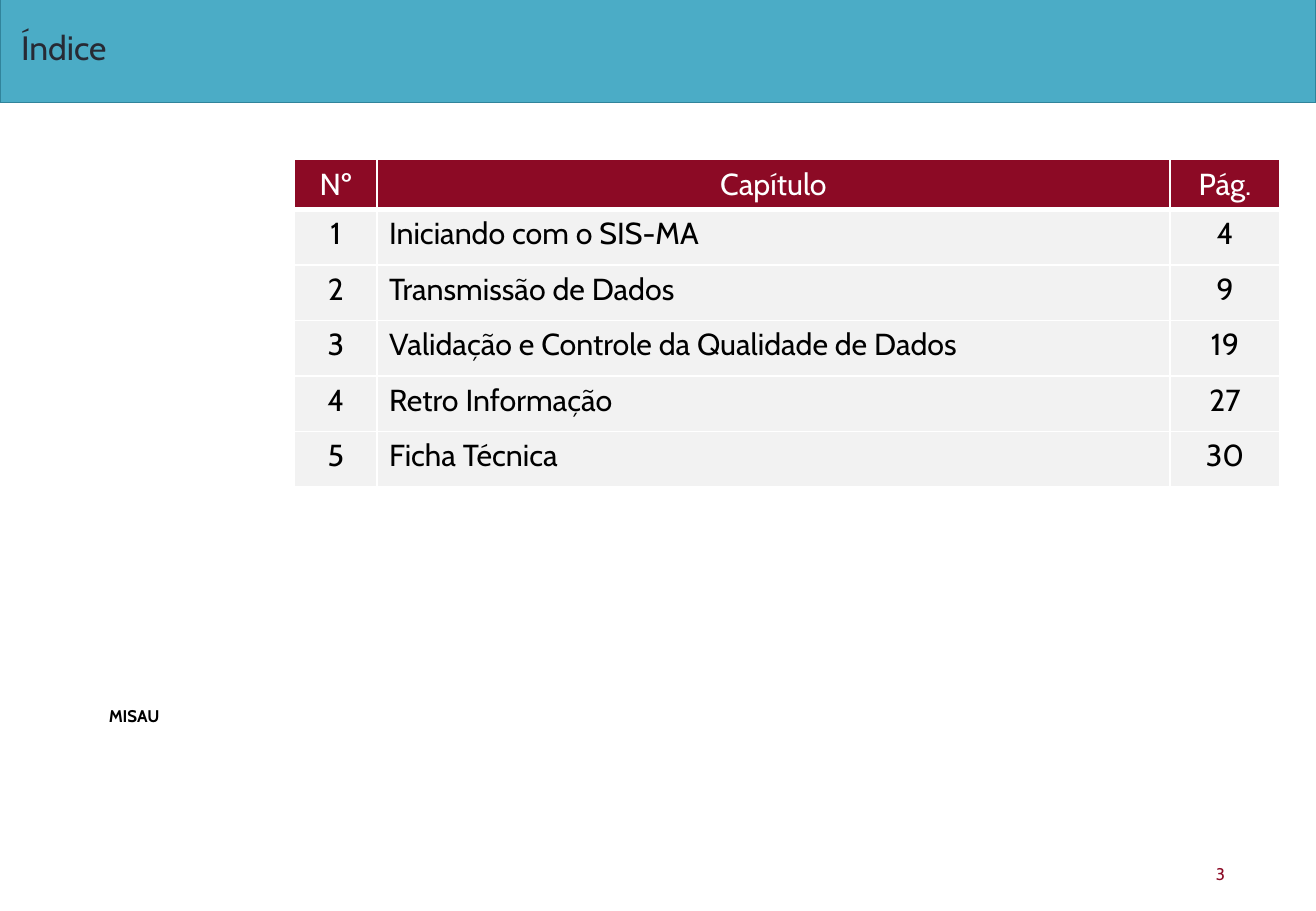
from dataclasses import dataclass

from lxml.etree import SubElement
from pptx import Presentation
from pptx.dml.color import RGBColor
from pptx.enum.shapes import MSO_SHAPE
from pptx.enum.text import MSO_ANCHOR, PP_ALIGN
from pptx.oxml.ns import qn
from pptx.slide import Slide
from pptx.table import _Cell
from pptx.text.text import _Paragraph
from pptx.util import Cm, Length, Pt

FONT = "Cabin"
TEAL = RGBColor(0x4B, 0xAC, 0xC6)
TEAL_DARK = RGBColor(0x31, 0x84, 0x9B)
WINE = RGBColor(0x8C, 0x0A, 0x25)
PAGE_RED = RGBColor(0x8C, 0x0B, 0x26)
INK = RGBColor(0x27, 0x2A, 0x34)
GREY = RGBColor(0xF2, 0xF2, 0xF2)
WHITE = RGBColor(0xFF, 0xFF, 0xFF)
BLACK = RGBColor(0x00, 0x00, 0x00)


@dataclass
class Label:
    text: str
    left: Length
    top: Length
    width: Length
    height: Length
    size: int
    color: RGBColor
    bold: bool = False
    align: PP_ALIGN = PP_ALIGN.LEFT
    inset: Length = Cm(0.25)


@dataclass
class Column:
    heading: str
    width: Length
    align: PP_ALIGN


@dataclass
class Chapter:
    title: str
    page: int


LABELS = [
    Label("Índice", Cm(0.36), Cm(0), Cm(22.81), Cm(1.98), 20, INK, inset=Cm(0.08)),
    Label("MISAU", Cm(1.55), Cm(14.63), Cm(2.51), Cm(0.69), 10, BLACK, True, PP_ALIGN.CENTER),
    Label("3", Cm(25.17), Cm(17.93), Cm(1.6), Cm(0.69), 10, PAGE_RED),
]
COLUMNS = [
    Column("Nº", Cm(1.72), PP_ALIGN.CENTER),
    Column("Capítulo", Cm(16.58), PP_ALIGN.JUSTIFY),
    Column("Pág.", Cm(2.3), PP_ALIGN.CENTER),
]
CHAPTERS = [
    Chapter("Iniciando com o SIS-MA", 4),
    Chapter("Transmissão de Dados", 9),
    Chapter("Validação e Controle da Qualidade de Dados", 19),
    Chapter("Retro Informação", 27),
    Chapter("Ficha Técnica", 30),
]
HEADING_HEIGHT = Cm(1.04)
CHAPTER_HEIGHT = Cm(1.16)


def add_run(paragraph: _Paragraph, text: str, size: int, color: RGBColor, bold: bool = False) -> None:
    run = paragraph.add_run()
    run.text = text
    run.font.name = FONT
    run.font.size = Pt(size)
    run.font.bold = bold
    run.font.color.rgb = color


def add_band(slide: Slide, width: Length) -> None:
    band = slide.shapes.add_shape(MSO_SHAPE.RECTANGLE, 0, Cm(-0.1), width, Cm(2.24))
    band.shadow.inherit = False
    band.fill.solid()
    band.fill.fore_color.rgb = TEAL
    band.line.color.rgb = TEAL_DARK
    band.line.width = Pt(0.75)


def add_label(slide: Slide, label: Label) -> None:
    frame = slide.shapes.add_textbox(label.left, label.top, label.width, label.height).text_frame
    frame.word_wrap = True
    frame.vertical_anchor = MSO_ANCHOR.MIDDLE
    frame.margin_left = frame.margin_right = label.inset
    frame.margin_top = frame.margin_bottom = min(label.inset, Cm(0.13))
    paragraph = frame.paragraphs[0]
    paragraph.alignment = label.align
    add_run(paragraph, label.text, label.size, label.color, label.bold)


def add_borders(cell: _Cell, top: int, bottom: int) -> None:
    properties = cell._tc.get_or_add_tcPr()
    for side, points in (("L", 1), ("R", 1), ("T", top), ("B", bottom)):
        border = SubElement(properties, qn(f"a:ln{side}"), w=str(Pt(points)))
        SubElement(SubElement(border, qn("a:solidFill")), qn("a:srgbClr"), val=str(WHITE))


def add_index(slide: Slide) -> None:
    rows = [[column.heading for column in COLUMNS]]
    rows += [[str(number), chapter.title, str(chapter.page)]
             for number, chapter in enumerate(CHAPTERS, start=1)]
    width = sum(column.width for column in COLUMNS)
    height = HEADING_HEIGHT + CHAPTER_HEIGHT * len(CHAPTERS)
    index = slide.shapes.add_table(len(rows), len(COLUMNS), Cm(6.16), Cm(3.34), width, height).table

    for position, column in enumerate(COLUMNS):
        index.columns[position].width = column.width

    for row, texts in enumerate(rows):
        heading = row == 0
        index.rows[row].height = HEADING_HEIGHT if heading else CHAPTER_HEIGHT
        for position, (column, text) in enumerate(zip(COLUMNS, texts)):
            cell = index.cell(row, position)
            add_borders(cell, top=3 if row == 1 else 1, bottom=3 if heading else 1)
            cell.fill.solid()
            cell.fill.fore_color.rgb = WINE if heading else GREY
            paragraph = cell.text_frame.paragraphs[0]
            paragraph.alignment = PP_ALIGN.CENTER if heading else column.align
            add_run(paragraph, text, 18, WHITE if heading else BLACK)


def main() -> None:
    presentation = Presentation()
    presentation.slide_width = Cm(27.51)
    presentation.slide_height = Cm(19.05)
    slide = presentation.slides.add_slide(presentation.slide_layouts[6])

    # Title band
    add_band(slide, presentation.slide_width)

    # Title, ministry name and page number
    for label in LABELS:
        add_label(slide, label)

    # Chapter index
    add_index(slide)

    presentation.save("out.pptx")


if __name__ == "__main__":
    main()
